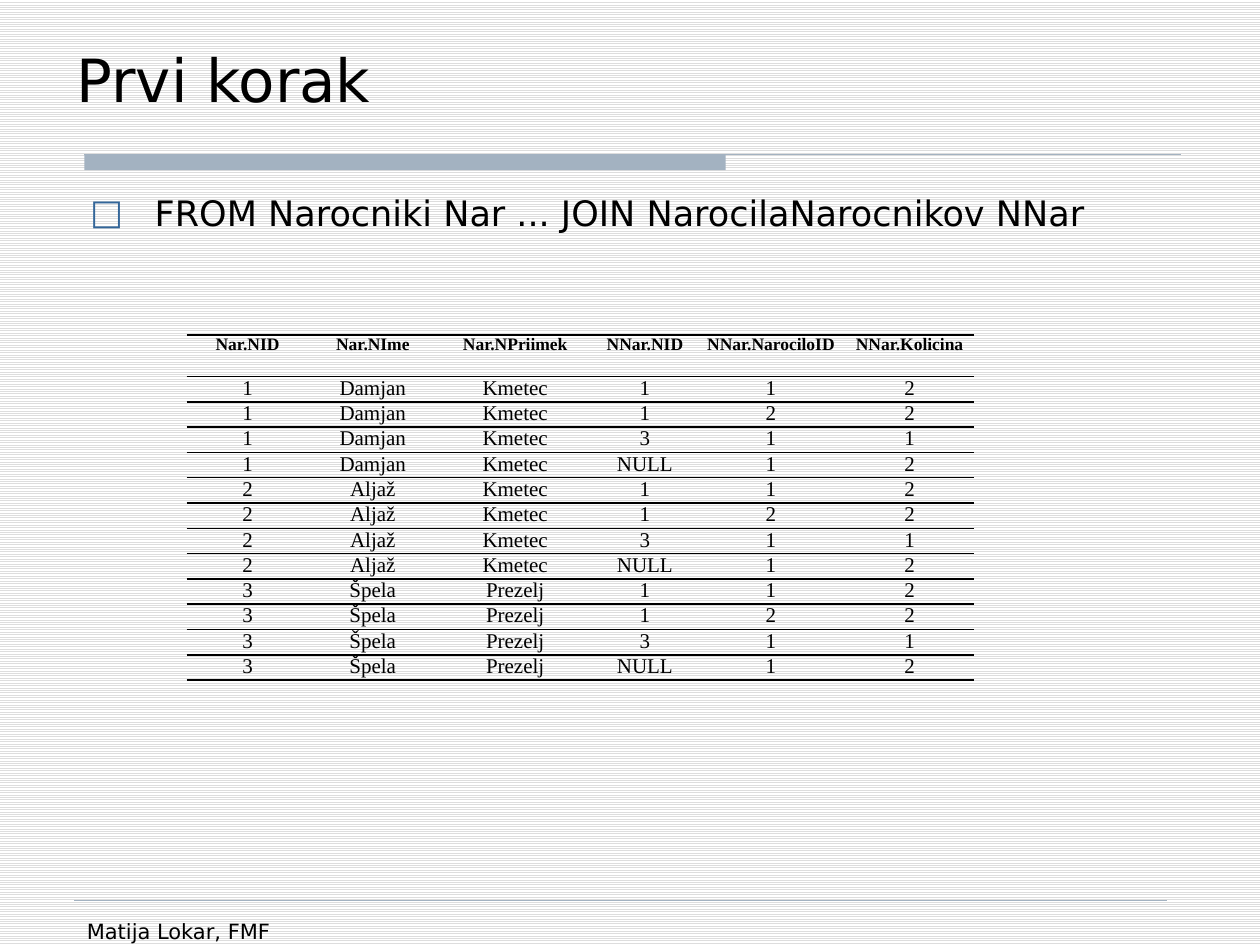
from itertools import product

from lxml import etree
from pptx import Presentation, util as u
from pptx.dml.color import RGBColor
from pptx.enum import dml, shapes, text
from pptx.oxml import ns

# Content
TITLE = "Prvi korak"
POINT = "FROM Narocniki Nar ... JOIN NarocilaNarocnikov NNar"
FOOT = "Matija Lokar, FMF"
HEAD = ("Nar.NID", "Nar.NIme", "Nar.NPriimek",
        "NNar.NID", "NNar.NarociloID", "NNar.Kolicina")
BUYERS = [("1", "Damjan", "Kmetec"), ("2", "Aljaž", "Kmetec"), ("3", "Špela", "Prezelj")]
ORDERS = [("1", "1", "2"), ("1", "2", "2"), ("3", "1", "1"), ("NULL", "1", "2")]
ROWS = [HEAD] + [buyer + order for buyer, order in product(BUYERS, ORDERS)]

THEME = dict(ink="000000", rule="A3B2C1", mark="336699", stripe="DDDDDD", paper="FFFFFF",
             sans="DejaVu Sans", serif="Times New Roman",
             title=34, body=20, foot=12, head=10, cell=12)

# Sizes in cm
COLS = (2.46, 2.59, 3.15, 2.08, 3.0, 2.59)
HEAD_H, ROW_H = 0.84, 0.51


def color(name):
    return RGBColor.from_string(THEME[name])


def write(frame, words, size, font="sans", bold=False, align=text.PP_ALIGN.LEFT):
    para = frame.paragraphs[0]
    para.alignment = align
    run = para.add_run()
    run.text = words
    run.font.name = THEME[font]
    run.font.size = u.Pt(THEME[size])
    run.font.bold = bold
    run.font.color.rgb = color("ink")
    return para


def add_box(slide, words, size, left, top, width, height, anchor=text.MSO_ANCHOR.TOP):
    frame = slide.shapes.add_textbox(*map(u.Cm, (left, top, width, height))).text_frame
    frame.word_wrap = True
    frame.vertical_anchor = anchor
    return write(frame, words, size)


def add_bullet(para, sign, indent):
    props = para._p.get_or_add_pPr()
    props.set("marL", str(u.Cm(indent)))
    props.set("indent", str(-u.Cm(indent)))
    tint = etree.SubElement(props, ns.qn("a:buClr"))
    etree.SubElement(tint, ns.qn("a:srgbClr"), val=THEME["mark"])
    etree.SubElement(props, ns.qn("a:buFont"), typeface=THEME["sans"])
    etree.SubElement(props, ns.qn("a:buChar"), char=sign)


def add_rule(slide, left, right, y, width):
    line = slide.shapes.add_connector(
        shapes.MSO_CONNECTOR.STRAIGHT, *map(u.Cm, (left, y, right, y)))
    line.line.color.rgb = color("rule")
    line.line.width = u.Pt(width)
    etree.SubElement(line._element.spPr, ns.qn("a:effectLst"))


def set_edges(cell):
    props = cell._tc.get_or_add_tcPr()
    for spot, side in enumerate(("lnL", "lnR", "lnT", "lnB")):
        edge = etree.Element(ns.qn("a:" + side), w=str(u.Pt(1)))
        if side in ("lnT", "lnB"):
            fill = etree.SubElement(edge, ns.qn("a:solidFill"))
            etree.SubElement(fill, ns.qn("a:srgbClr"), val=THEME["ink"])
        else:
            etree.SubElement(edge, ns.qn("a:noFill"))
        props.insert(spot, edge)


def add_grid(slide, left, top):
    high = HEAD_H + ROW_H * (len(ROWS) - 1)
    grid = slide.shapes.add_table(
        len(ROWS), len(COLS), *map(u.Cm, (left, top, sum(COLS), high))).table
    grid.first_row = grid.horz_banding = False
    for col, width in zip(grid.columns, COLS):
        col.width = u.Cm(width)
    for r, row in enumerate(ROWS):
        top_row = r == 0
        grid.rows[r].height = u.Cm(HEAD_H if top_row else ROW_H)
        for c, words in enumerate(row):
            cell = grid.cell(r, c)
            cell.margin_left = cell.margin_right = u.Cm(0.18)
            cell.margin_top = cell.margin_bottom = 0
            cell.fill.background()
            set_edges(cell)
            write(cell.text_frame, words, "head" if top_row else "cell", font="serif",
                  bold=top_row, align=text.PP_ALIGN.CENTER)


def main():
    deck = Presentation()
    deck.slide_width, deck.slide_height = u.Cm(25.4), u.Cm(19.05)
    slide = deck.slides.add_slide(deck.slide_layouts[6])

    # Striped background
    fill = slide.background.fill
    fill.patterned()
    fill.pattern = dml.MSO_PATTERN.LIGHT_HORIZONTAL
    fill.fore_color.rgb = color("stripe")
    fill.back_color.rgb = color("paper")

    # Band and rules
    band = slide.shapes.add_shape(
        shapes.MSO_SHAPE.RECTANGLE, *map(u.Cm, (1.7, 3.12, 12.93, 0.31)))
    band.shadow.inherit = False
    band.fill.solid()
    band.fill.fore_color.rgb = color("rule")
    band.line.fill.background()
    add_rule(slide, 1.7, 23.8, 3.12, 0.75)
    add_rule(slide, 1.5, 23.52, 18.14, 0.25)

    # Title, point and footer
    add_box(slide, TITLE, "title", 1.3, 0.53, 22.23, 1.9, anchor=text.MSO_ANCHOR.BOTTOM)
    point = add_box(slide, POINT, "body", 1.57, 3.73, 22.23, 14)
    point.space_before = u.Pt(THEME["body"] * 0.2)
    add_bullet(point, "□", 1.3)
    add_box(slide, FOOT, "foot", 1.5, 18.39, 5.51, 1.32)

    # Joined table
    add_grid(slide, 3.76, 6.75)

    deck.save("out.pptx")


if __name__ == "__main__":
    main()
